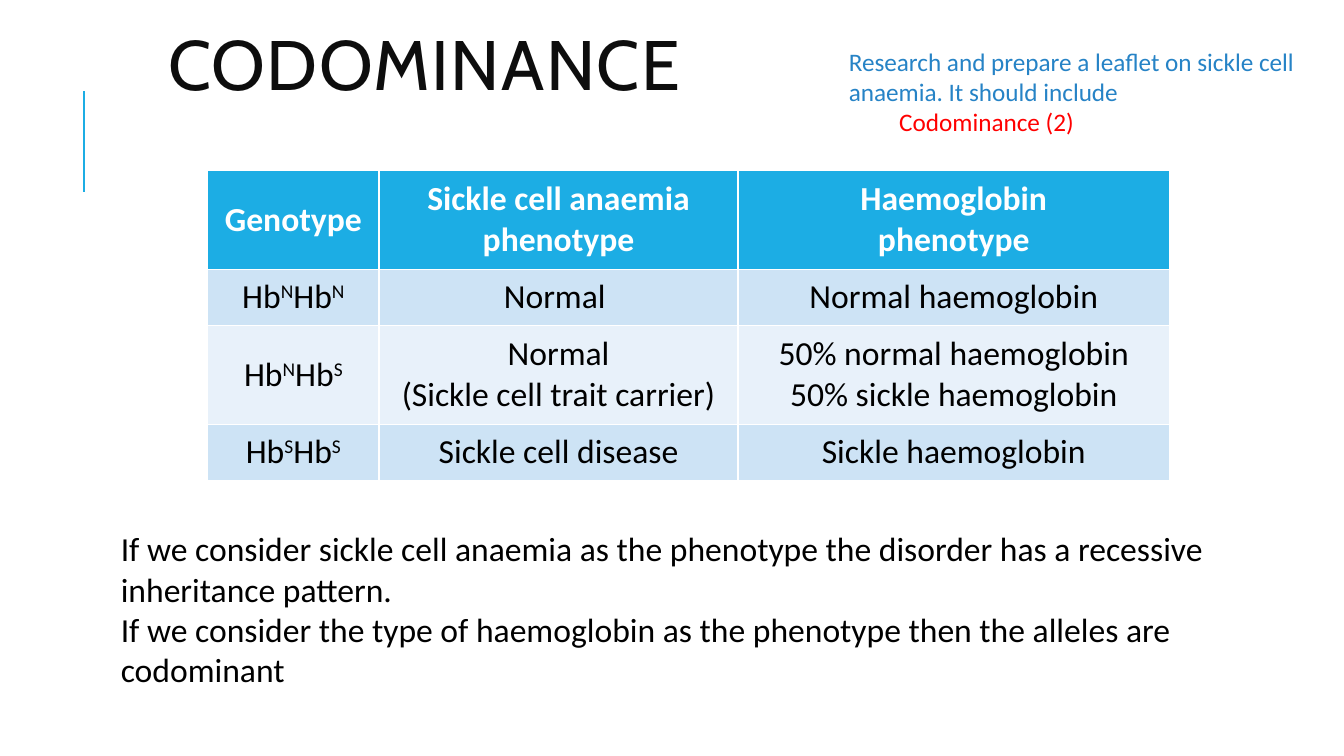
from dataclasses import dataclass
from lxml import etree
from pptx import Presentation
from pptx.dml.color import RGBColor
from pptx.enum.shapes import MSO_CONNECTOR
from pptx.enum.text import MSO_ANCHOR, PP_ALIGN
from pptx.oxml.ns import qn
from pptx.util import Inches, Pt

LINE = MSO_CONNECTOR.STRAIGHT
MIDDLE = MSO_ANCHOR.MIDDLE
CENTER = PP_ALIGN.CENTER


@dataclass(frozen=True)
class Theme:
    accent: str = "1CADE4"
    title: str = "0D0D0D"
    task: str = "2683C6"
    alert: str = "FF0000"
    text: str = "000000"
    white: str = "FFFFFF"
    bands: tuple = ("CDE3F5", "E8F1FA")
    head: str = "Cabin"
    body: str = "Calibri"
    large: int = 50
    medium: int = 24
    small: int = 18


theme = Theme()


def write(frame, lines, size, color, face=theme.body):
    frame.word_wrap = True
    for i, line in enumerate(lines):
        para = frame.paragraphs[0] if i == 0 else frame.add_paragraph()
        para.font.size = Pt(size)
        para.font.name = face
        para.font.color.rgb = RGBColor.from_string(color)
        for j, part in enumerate(line.split("^")):
            run = para.add_run()
            run.text = part
            if j % 2:
                run.font._element.set("baseline", "30000")
    return frame.paragraphs


def add_text(box, lines, size, color, face=theme.body):
    frame = slide.shapes.add_textbox(*map(Inches, box)).text_frame
    return frame, write(frame, lines, size, color, face)


deck = Presentation()
deck.slide_width = Inches(13.33)
deck.slide_height = Inches(7.5)
slide = deck.slides.add_slide(deck.slide_layouts[6])

rule = slide.shapes.add_connector(
    LINE, Inches(0.83), Inches(1.9), Inches(0.83), Inches(0.9))
rule.line.color.rgb = RGBColor.from_string(theme.accent)
rule.line.width = Pt(1.5)
etree.SubElement(rule._element.spPr, qn("a:effectLst"))

frame, paras = add_text(
    (1.57, 0.31, 9, 0.78), ["CODOMINANCE"], theme.large, theme.title, theme.head)
frame.vertical_anchor = MIDDLE
paras[0].line_spacing = 0.8
paras[0].runs[0].font._element.set("spc", "100")

rows = [
    ["Genotype", "Sickle cell anaemia\nphenotype", "Haemoglobin\n phenotype "],
    ["Hb^N^Hb^N", "Normal ", "Normal haemoglobin"],
    ["Hb^N^Hb^S", "Normal\n(Sickle cell trait carrier)",
     "50% normal haemoglobin\n50% sickle haemoglobin"],
    ["Hb^S^Hb^S", "Sickle cell disease", "Sickle haemoglobin"],
]
widths = [1.7, 3.56, 4.28]
heights = [0.98, 0.56, 0.98, 0.56]
table = slide.shapes.add_table(
    len(rows), len(widths), Inches(2.06), Inches(1.69),
    Inches(sum(widths)), Inches(sum(heights))).table
for col, width in zip(table.columns, widths):
    col.width = Inches(width)
for r, row in enumerate(rows):
    table.rows[r].height = Inches(heights[r])
    fill = theme.bands[(r - 1) % 2] if r else theme.accent
    color = theme.text if r else theme.white
    for c, text in enumerate(row):
        cell = table.cell(r, c)
        cell.fill.solid()
        cell.fill.fore_color.rgb = RGBColor.from_string(fill)
        cell.vertical_anchor = MIDDLE
        for para in write(cell.text_frame, text.split("\n"), theme.medium, color):
            para.alignment = CENTER
            para.font.bold = r == 0

frame, paras = add_text(
    (8.32, 0.41, 4.82, 1.01),
    ["Research and prepare a leaflet on sickle cell anaemia. It should include",
     "Codominance (2)"], theme.small, theme.task)
paras[1].level = 1
paras[1].font.color.rgb = RGBColor.from_string(theme.alert)
paras[1]._p.get_or_add_pPr().set("marL", str(Inches(0.5)))

add_text(
    (1.1, 5.19, 11.24, 1.72),
    ["If we consider sickle cell anaemia as the phenotype the disorder has a "
     "recessive inheritance pattern.",
     "If we consider the type of haemoglobin as the phenotype then the alleles "
     "are codominant"], theme.medium, theme.text)

deck.save("out.pptx")
